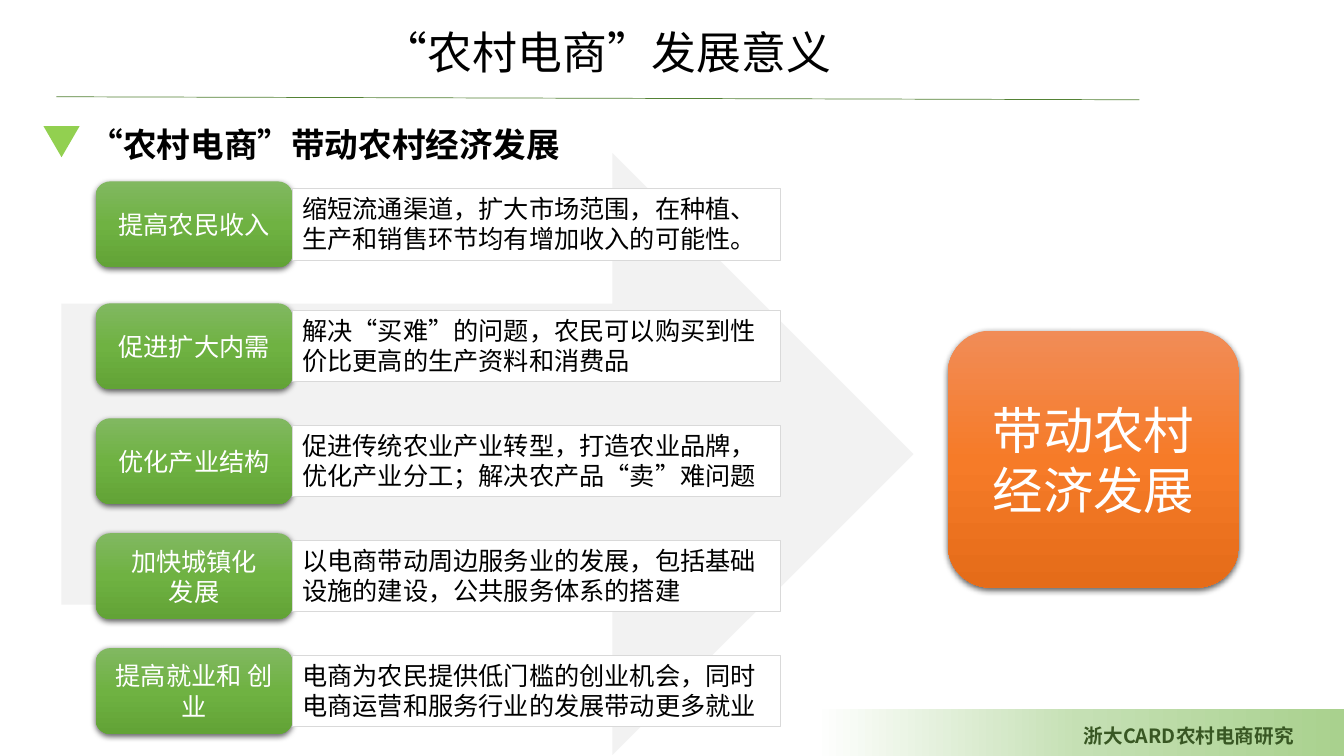
from lxml import etree
from pptx import Presentation
from pptx.dml.color import RGBColor
from pptx.enum.shapes import MSO_CONNECTOR, MSO_SHAPE
from pptx.enum.text import MSO_ANCHOR, MSO_AUTO_SIZE, PP_ALIGN
from pptx.oxml import parse_xml
from pptx.oxml.ns import nsdecls, qn
from pptx.util import Inches, Pt

RECT, ROUND = MSO_SHAPE.RECTANGLE, MSO_SHAPE.ROUNDED_RECTANGLE
ARROW, WEDGE = MSO_SHAPE.RIGHT_ARROW, MSO_SHAPE.ISOSCELES_TRIANGLE
LEFT, MID, JUST = PP_ALIGN.LEFT, PP_ALIGN.CENTER, PP_ALIGN.JUSTIFY
TOP, CENTRE = MSO_ANCHOR.TOP, MSO_ANCHOR.MIDDLE
FIT = MSO_AUTO_SIZE.SHAPE_TO_FIT_TEXT
FACE = "Noto Sans CJK SC"

BLACK = RGBColor(0x00, 0x00, 0x00)
WHITE = RGBColor(0xFF, 0xFF, 0xFF)
PALE = RGBColor(0xF2, 0xF2, 0xF2)
EDGE = RGBColor(0xD9, 0xD9, 0xD9)
LIME = RGBColor(0x92, 0xD0, 0x50)
RULE = RGBColor(0x54, 0x82, 0x35)
DARK = RGBColor(0x38, 0x57, 0x23)
GREEN = [RGBColor(0x81, 0xB8, 0x61), RGBColor(0x6F, 0xB2, 0x42), RGBColor(0x62, 0xA3, 0x36)]
ORANGE = [RGBColor(0xF1, 0x8C, 0x57), RGBColor(0xF6, 0x7B, 0x28), RGBColor(0xE5, 0x6C, 0x19)]
FADE = [RGBColor(0xA9, 0xD1, 0x8E), RGBColor(0xC5, 0xE0, 0xB4), WHITE]

deck = Presentation()
deck.slide_width, deck.slide_height = Inches(13.33), Inches(7.5)
slide = deck.slides.add_slide(deck.slide_layouts[6])


def draw(kind, box, fill, edge=None, angle=90, glow=False):
    """Add a shape; a list of colours as fill makes an even gradient."""
    shape = slide.shapes.add_shape(kind, *map(Inches, box))
    shape.shadow.inherit = False
    if isinstance(fill, list):
        stops = "".join(
            f'<a:gs pos="{n * 50000}"><a:srgbClr val="{tone}"/></a:gs>'
            for n, tone in enumerate(fill))
        shape._element.spPr.insert(2, parse_xml(
            f'<a:gradFill {nsdecls("a")} rotWithShape="1"><a:gsLst>{stops}</a:gsLst>'
            f'<a:lin ang="{angle * 60000}" scaled="0"/></a:gradFill>'))
    else:
        shape.fill.solid()
        shape.fill.fore_color.rgb = fill
    if edge is None:
        shape.line.fill.background()
    else:
        shape.line.color.rgb = edge
        shape.line.width = Pt(0.75)
    if glow:
        shape._element.spPr.find(qn("a:effectLst")).append(parse_xml(
            f'<a:outerShdw {nsdecls("a")} blurRad="{Pt(4.5)}" dist="{Pt(1.5)}" '
            'dir="5400000" algn="ctr" rotWithShape="0"><a:srgbClr val="000000">'
            '<a:alpha val="63000"/></a:srgbClr></a:outerShdw>'))
    return shape


def write(shape, text, size, color, align=LEFT, anchor=TOP, fit=True, bold=False):
    frame = shape.text_frame
    frame.word_wrap = True
    frame.vertical_anchor = anchor
    if fit:
        frame.auto_size = FIT
    frame.text = text
    para = frame.paragraphs[0]
    para.alignment = align
    look = {"name": FACE, "size": Pt(size), "bold": bold}
    for run in para.runs:
        for key, value in look.items():
            setattr(run.font, key, value)
        run.font.color.rgb = color
        etree.SubElement(run.font._element, qn("a:ea"), typeface=FACE)


# Footer band, title rule and backdrop
draw(RECT, (8.08, 7.03, 5.25, 0.47), FADE, angle=180)
rule = slide.shapes.add_connector(
    MSO_CONNECTOR.STRAIGHT, Inches(0.56), Inches(0.96), Inches(11.3), Inches(0.99))
rule.line.color.rgb = RULE
rule.line.width = Pt(0.5)
etree.SubElement(rule._element.spPr, qn("a:effectLst"))
draw(ARROW, (0.61, 1.52, 8.45, 5.97), PALE)

# Headings
heads = [
    ((10.65, 7.13, 2.68, 0.34), "浙大CARD农村电商研究", 14, DARK, JUST, True),
    ((3.7, 0.2, 5.36, 0.64), "“农村电商”发展意义", 32, BLACK, JUST, False),
    ((0.79, 1.18, 6.19, 0.5), "“农村电商”带动农村经济发展", 24, BLACK, LEFT, True),
]
for box, text, size, color, align, bold in heads:
    write(slide.shapes.add_textbox(*map(Inches, box)), text, size, color, align, bold=bold)
draw(WEDGE, (0.43, 1.25, 0.36, 0.31), LIME).rotation = 180

# Five drivers: the first row stands apart, the rest keep an even step
START, FIRST, STEP = 1.8, 3.01, 1.14
rows = [
    ("提高农民收入", "缩短流通渠道，扩大市场范围，在种植、生产和销售环节均有增加收入的可能性。"),
    ("促进扩大内需", "解决“买难”的问题，农民可以购买到性价比更高的生产资料和消费品"),
    ("优化产业结构", "促进传统农业产业转型，打造农业品牌，优化产业分工；解决农产品“卖”难问题"),
    ("加快城镇化\v发展", "以电商带动周边服务业的发展，包括基础设施的建设，公共服务体系的搭建"),
    ("提高就业和 创业", "电商为农民提供低门槛的创业机会，同时电商运营和服务行业的发展带动更多就业"),
]
for n, (name, detail) in enumerate(rows):
    top = FIRST + (n - 1) * STEP if n else START
    tag = draw(ROUND, (0.95, top, 1.95, 0.85), GREEN, glow=True)
    write(tag, name, 18, WHITE, MID, CENTRE, fit=False)
    note = draw(RECT, (2.9, top + 0.07, 4.84, 0.71), WHITE, EDGE)
    write(note, detail, 18, BLACK)

# Outcome
goal = draw(ROUND, (9.4, 3.28, 2.89, 2.55), ORANGE, glow=True)
write(goal, "带动农村经济发展", 36, WHITE, MID, CENTRE, fit=False)

deck.save("out.pptx")
